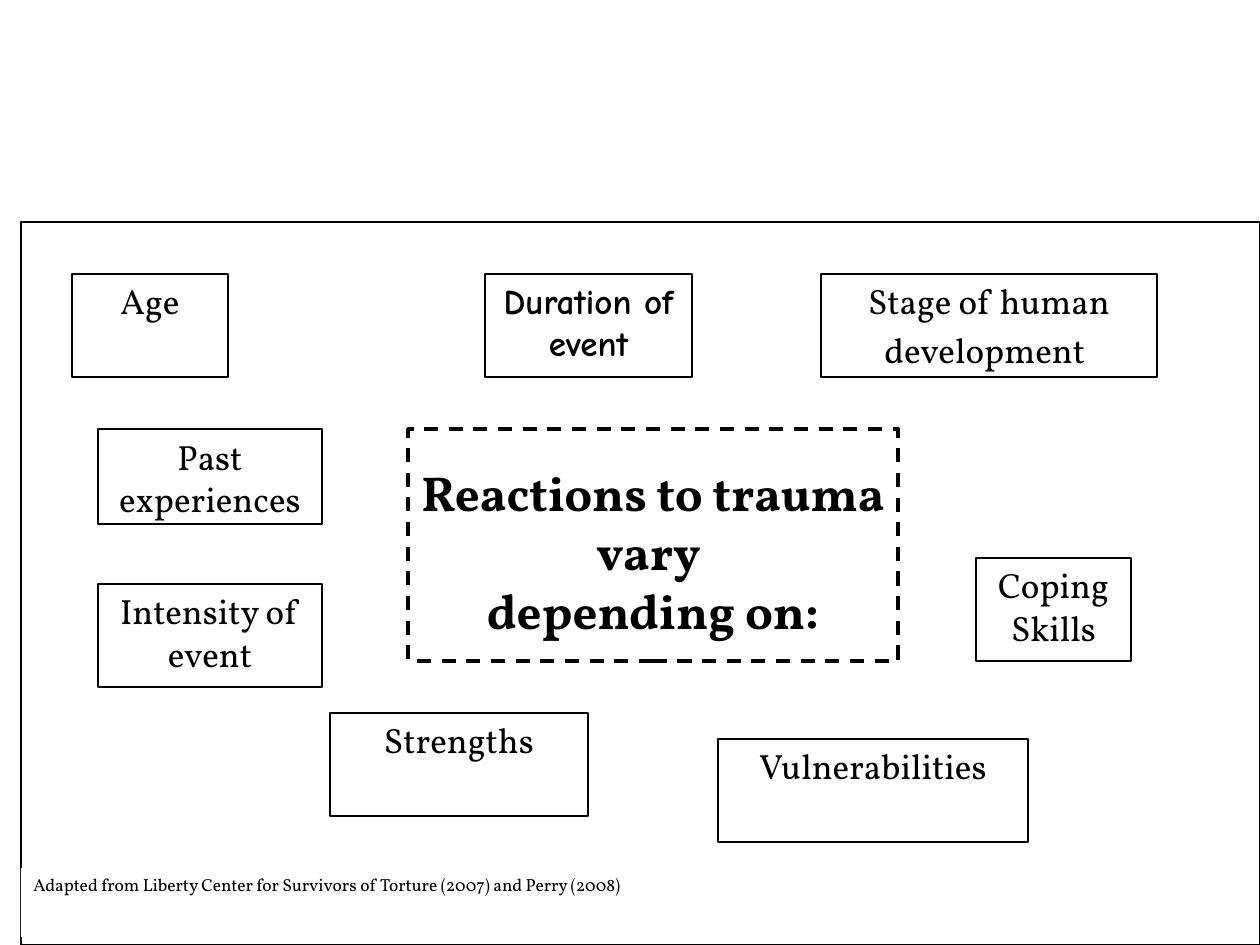
"""Build a slide of factors that shape reactions to trauma."""
from dataclasses import dataclass

from pptx import Presentation
from pptx.dml.color import RGBColor
from pptx.enum.dml import MSO_LINE
from pptx.enum.shapes import MSO_SHAPE
from pptx.enum.text import MSO_ANCHOR, PP_ALIGN
from pptx.util import Emu, Pt

RECTANGLE = MSO_SHAPE.RECTANGLE
DASH = MSO_LINE.DASH
TOP = MSO_ANCHOR.TOP
CENTER, LEFT = PP_ALIGN.CENTER, PP_ALIGN.LEFT
PX_PER_INCH = 126
BLACK, WHITE = "000000", "FFFFFF"
SERIF, COMIC = "Vollkorn", "Comic Neue"


@dataclass(frozen=True)
class Factor:
    text: str
    left: int
    top: int
    width: int
    height: int = 103
    font: str = SERIF
    bold: bool = False
    end_space: int = 0


FACTORS = [
    Factor("Age", 72, 274, 156),
    Factor("Duration of event", 485, 274, 207, font=COMIC, bold=True),
    Factor("Stage of human development", 821, 274, 336, end_space=24),
    Factor("Past experiences", 98, 429, 224, height=95),
    Factor("Intensity of event", 98, 584, 224),
    Factor("Coping Skills", 976, 558, 155),
    Factor("Strengths", 330, 713, 258),
    Factor("Vulnerabilities", 718, 739, 310),
]


def px(length: int) -> Emu:
    return Emu(round(length * 914400 / PX_PER_INCH))


def color(value: str) -> RGBColor:
    return RGBColor.from_string(value)


def add_box(page, left: int, top: int, width: int, height: int, *,
            fill: str = WHITE, line: float = 0.75, dash=None, inset: int = 6):
    box = page.shapes.add_shape(RECTANGLE, px(left), px(top), px(width), px(height))
    box.shadow.inherit = False
    if fill:
        box.fill.solid()
        box.fill.fore_color.rgb = color(fill)
    else:
        box.fill.background()
    if line:
        box.line.color.rgb = color(BLACK)
        box.line.width = Pt(line)
        if dash:
            box.line.dash_style = dash
    else:
        box.line.fill.background()
    frame = box.text_frame
    frame.word_wrap = True
    frame.vertical_anchor = TOP
    frame.margin_top = px(inset)
    return box


def add_span(para, text: str, *, size: int = 20, font: str = SERIF,
             bold: bool = False) -> None:
    span = para.add_run()
    span.text = text
    span.font.size = Pt(size)
    span.font.name = font
    span.font.bold = bold
    span.font.color.rgb = color(BLACK)


def write(box, text: str, *, align=CENTER, **style):
    frame = box.text_frame
    para = frame.paragraphs[0]
    if para.runs:
        para = frame.add_paragraph()
    para.alignment = align
    add_span(para, text, **style)
    return para


def add_factor(page, factor: Factor) -> None:
    box = add_box(page, factor.left, factor.top, factor.width, factor.height)
    para = write(box, factor.text, font=factor.font, bold=factor.bold)
    if factor.end_space:
        add_span(para, " ", size=factor.end_space)


def main() -> None:
    deck = Presentation()
    deck.slide_width, deck.slide_height = px(1260), px(945)
    page = deck.slides.add_slide(deck.slide_layouts[6])

    add_box(page, 21, 222, 1239, 723, fill="")
    topic = add_box(page, 408, 429, 490, 232, line=2, dash=DASH, inset=34)
    for text in ("Reactions to trauma vary ", "depending on:"):
        write(topic, text, size=28, bold=True)
    for factor in FACTORS:
        add_factor(page, factor)
    credit = add_box(page, 21, 868, 1153, 69, line=0)
    write(credit, "Adapted from Liberty Center for Survivors of Torture (2007) and Perry (2008)",
          align=LEFT, size=10)

    deck.save("out.pptx")


if __name__ == "__main__":
    main()
